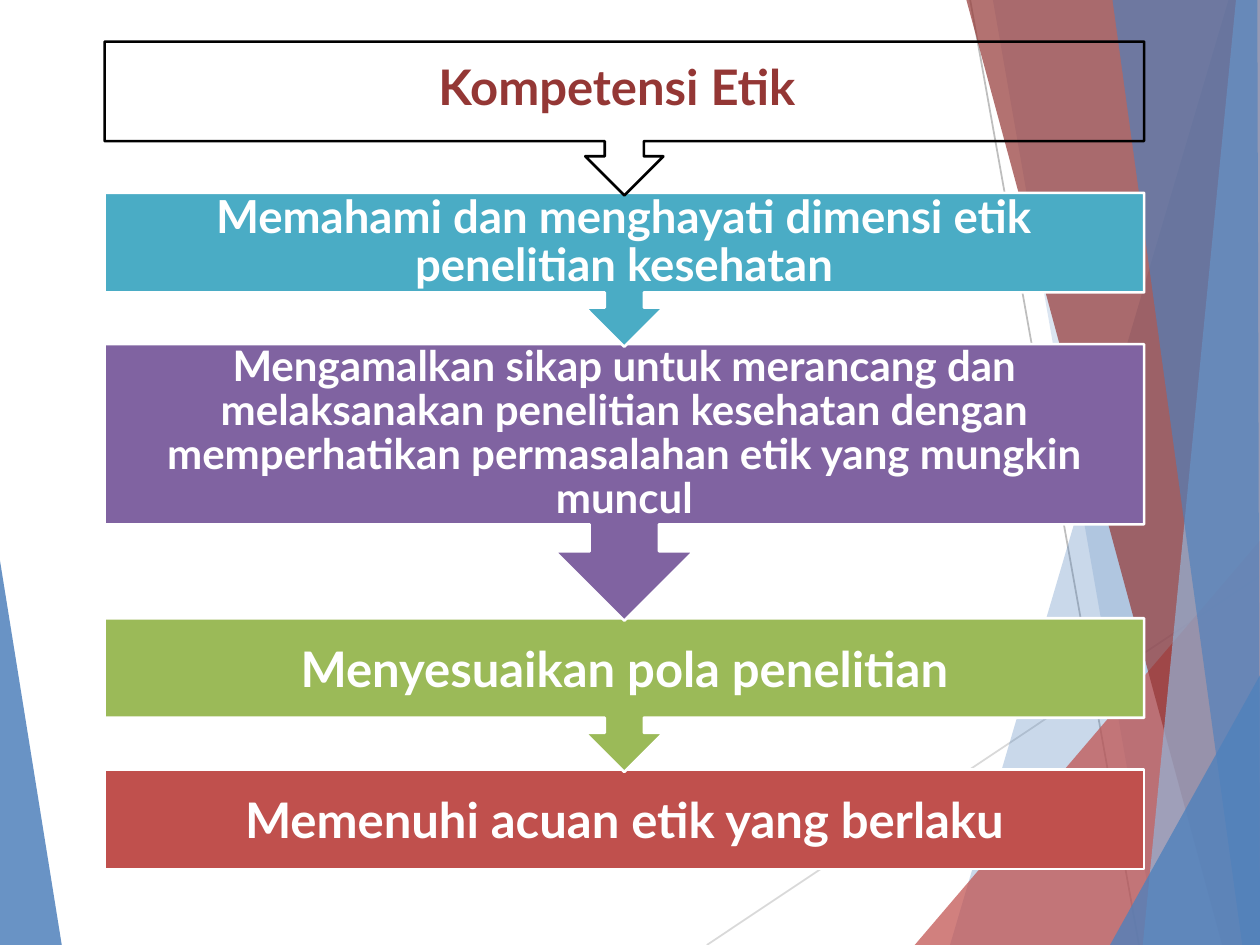
"""Build a slide of ethics competencies as a chain of down-arrow callouts."""
from dataclasses import dataclass

from lxml import etree
from pptx import Presentation
from pptx.dml.color import RGBColor
from pptx.enum.shapes import MSO_CONNECTOR
from pptx.enum.text import MSO_ANCHOR, MSO_AUTO_SIZE, PP_ALIGN
from pptx.oxml.ns import qn
from pptx.util import Inches, Pt

STRAIGHT = MSO_CONNECTOR.STRAIGHT
TOP, MIDDLE = MSO_ANCHOR.TOP, MSO_ANCHOR.MIDDLE
LEFT, CENTER = PP_ALIGN.LEFT, PP_ALIGN.CENTER
NO_AUTOFIT = MSO_AUTO_SIZE.NONE
TITLE_ONLY = 5


@dataclass(frozen=True)
class Theme:
    """Colours, font and type sizes."""
    font: str = "Lato"
    white: str = "FFFFFF"
    black: str = "000000"
    blue: str = "4F81BC"
    pale_blue: str = "94B3D6"
    red: str = "C0504D"
    dark_red: str = "943735"
    green: str = "9BBA58"
    purple: str = "8063A1"
    teal: str = "4AACC5"
    light_gray: str = "D9D9D9"
    gray: str = "BEBEBE"
    large: float = 28
    medium: float = 26
    small: float = 24


THEME = Theme()
PAGE_WIDTH, PAGE_HEIGHT = 10, 7.5
CHAIN_LEFT, CHAIN_TOP, CHAIN_WIDTH = 0.83, 0.33, 8.25
BAR, TALL_BAR = 0.79, 1.43
ARROW, BIG_ARROW = 0.31, 0.55
SHOULDER_RATIO = 0.39
OVERLAP = 0.02
SIDE_INSET = 0.29


@dataclass(frozen=True)
class Facet:
    """A translucent polygon of the backdrop."""
    points: tuple
    color: str
    opacity: int


@dataclass(frozen=True)
class Ray:
    """A thin line of the backdrop."""
    start: tuple
    end: tuple
    color: str


@dataclass(frozen=True)
class Step:
    """A bar with an optional arrow pointing to the next bar."""
    text: str
    height: float
    arrow: float
    fill: str | None
    line: str = THEME.white
    size: float = THEME.large
    spacing: object = 1.0

    @property
    def drop(self) -> float:
        """Return the arrow's full length below the bar."""
        return self.arrow * (1 + SHOULDER_RATIO)


BACKDROP = (
    Facet(((0, 4.45), (0, 7.5), (0.49, 7.5)), THEME.blue, 85),
    Ray((5.61, 7.5), (10, 4.57), THEME.light_gray),
    Ray((7.7, 0), (9.04, 7.5), THEME.gray),
    Facet(((9.75, 0), (7.54, 7.5), (10, 7.5), (10, 0)), THEME.blue, 30),
    Facet(((10, 0), (7.88, 0), (9.19, 7.5), (10, 7.5)), THEME.blue, 20),
    Facet(((10, 4.29), (7.26, 7.5), (10, 7.5)), THEME.red, 72),
    Facet(((10, 0), (7.67, 0), (9.7, 7.5), (10, 7.5)), THEME.dark_red, 70),
    Facet(((10, 0), (9.81, 0), (9.07, 7.5), (10, 7.5)), THEME.pale_blue, 70),
    Facet(((9.98, 0), (8.83, 0), (9.86, 7.5), (10, 7.5), (9.98, 0.27)), THEME.blue, 65),
    Facet(((10, 5.36), (8.81, 7.5), (10, 7.5)), THEME.blue, 80),
)

STEPS = (
    Step("", BAR, ARROW, None, THEME.black),
    Step("Memahami dan menghayati dimensi etik penelitian kesehatan",
         BAR, ARROW, THEME.teal, size=THEME.medium, spacing=Pt(27.2)),
    Step("Mengamalkan sikap untuk merancang dan melaksanakan penelitian kesehatan "
         "dengan memperhatikan permasalahan etik yang mungkin muncul",
         TALL_BAR, BIG_ARROW, THEME.purple, size=THEME.small, spacing=0.87),
    Step("Menyesuaikan pola penelitian", BAR, ARROW, THEME.green),
    Step("Memenuhi acuan etik yang berlaku", BAR, 0, THEME.red),
)


def write(frame, text: str, *, size: float, color: str, align=CENTER, anchor=MIDDLE,
          insets: tuple = (0, 0, 0, 0), spacing=1.0) -> None:
    """Put one formatted paragraph into a text frame."""
    frame.word_wrap = True
    frame.auto_size = NO_AUTOFIT
    frame.vertical_anchor = anchor
    frame.margin_left, frame.margin_top, frame.margin_right, frame.margin_bottom = map(Inches, insets)
    para = frame.paragraphs[0]
    para.alignment = align
    para.line_spacing = spacing
    span = para.add_run()
    span.text = text
    span.font.name = THEME.font
    span.font.size = Pt(size)
    span.font.bold = True
    span.font.color.rgb = RGBColor.from_string(color)


def draw_polygon(page, points: tuple, fill: str | None, line: str | None = None):
    """Draw a closed outline through points given in inches."""
    corners = [(Inches(x), Inches(y)) for x, y in points]
    builder = page.shapes.build_freeform(*corners[0])
    builder.add_line_segments(corners[1:], close=True)
    shape = builder.convert_to_shape()
    shape.shadow.inherit = False
    if fill:
        shape.fill.solid()
        shape.fill.fore_color.rgb = RGBColor.from_string(fill)
    else:
        shape.fill.background()
    if line:
        shape.line.color.rgb = RGBColor.from_string(line)
        shape.line.width = Pt(1.5)
    else:
        shape.line.fill.background()
    return shape


def draw_facet(page, facet: Facet) -> None:
    """Draw a backdrop polygon with its opacity."""
    shape = draw_polygon(page, facet.points, facet.color)
    color = shape.fill._xPr.find(qn("a:solidFill")).find(qn("a:srgbClr"))
    etree.SubElement(color, qn("a:alpha"), val=str(facet.opacity * 1000))


def draw_ray(page, ray: Ray) -> None:
    """Draw a backdrop line."""
    line = page.shapes.add_connector(STRAIGHT, *map(Inches, ray.start + ray.end))
    line.line.color.rgb = RGBColor.from_string(ray.color)
    line.line.width = Pt(1)
    etree.SubElement(line._element.spPr, qn("a:effectLst"))


def draw_step(page, step: Step, top: float) -> None:
    """Draw a bar, its arrow and its text."""
    right, middle = CHAIN_LEFT + CHAIN_WIDTH, CHAIN_LEFT + CHAIN_WIDTH / 2
    bottom, head, neck = top + step.height, step.arrow, step.arrow / 2
    shoulder = bottom + head * SHOULDER_RATIO
    points = [(CHAIN_LEFT, top), (CHAIN_LEFT, bottom)]
    if head:
        points += [(middle - neck, bottom), (middle - neck, shoulder), (middle - head, shoulder),
                   (middle, bottom + step.drop),
                   (middle + head, shoulder), (middle + neck, shoulder), (middle + neck, bottom)]
    points += [(right, bottom), (right, top)]
    shape = draw_polygon(page, tuple(points), step.fill, step.line)
    if step.text:
        write(shape.text_frame, step.text, size=step.size, color=THEME.white, spacing=step.spacing,
              insets=(SIDE_INSET, 0, SIDE_INSET, step.drop))


def main() -> None:
    """Build and save the deck."""
    deck = Presentation()
    deck.slide_width, deck.slide_height = Inches(PAGE_WIDTH), Inches(PAGE_HEIGHT)
    page = deck.slides.add_slide(deck.slide_layouts[TITLE_ONLY])
    for part in BACKDROP:
        if isinstance(part, Facet):
            draw_facet(page, part)
        else:
            draw_ray(page, part)
    tops = [CHAIN_TOP]
    for step in STEPS[:-1]:
        tops.append(tops[-1] + step.height + step.drop - OVERLAP)
    for step, top in reversed(list(zip(STEPS, tops))):
        draw_step(page, step, top)
    title = page.shapes.title
    title.left, title.top, title.width, title.height = map(Inches, (3.47, 0.44, 2.98, 0.49))
    write(title.text_frame, "Kompetensi Etik", size=THEME.large, color=THEME.dark_red,
          align=LEFT, anchor=TOP, insets=(0.01, 0.01, 0, 0))
    deck.save("out.pptx")


if __name__ == "__main__":
    main()
